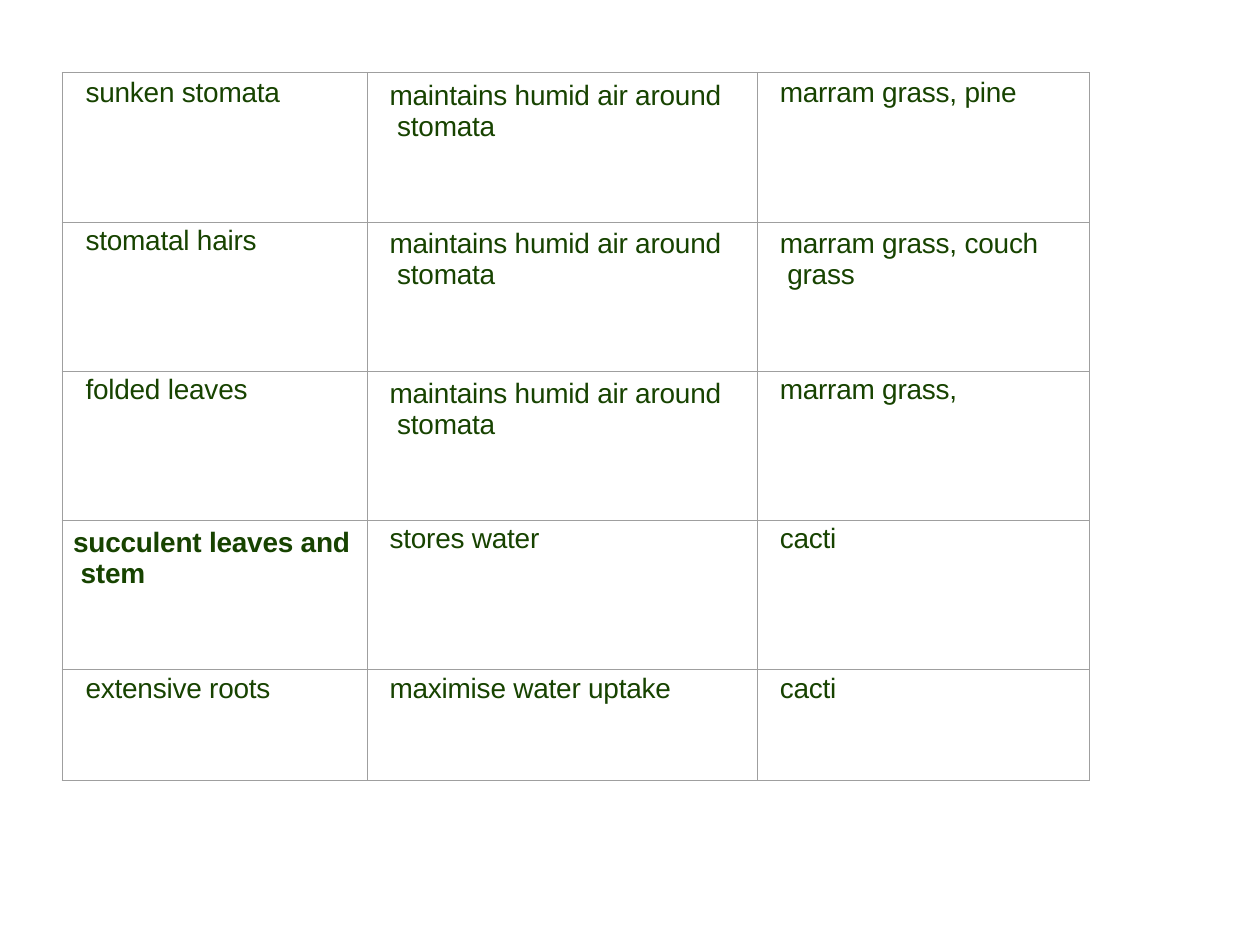
from lxml.etree import SubElement
from pptx import Presentation
from pptx.dml.color import RGBColor
from pptx.oxml.ns import qn
from pptx.util import Pt

GREEN, GREY = "174300", "9F9F9F"
COL_WIDTHS = [174.25, 223, 189.75]
ROW_HEIGHTS = [85.25] * 4 + [63.5]
INDENTS = [13.4, 12.9, 12.9]
WRAP_INDENT = 4.3
HUMID = "maintains humid air around stomata"
ADAPTATIONS = [
    ["sunken stomata", HUMID, "marram grass, pine"],
    ["stomatal hairs", HUMID, "marram grass, couch grass"],
    ["folded leaves", HUMID, "marram grass,"],
    ["succulent leaves and stem", "stores water", "cacti"],
    ["extensive roots", "maximise water uptake", "cacti"],
]
WRAPPED = {HUMID, "marram grass, couch grass", "succulent leaves and stem"}


def rgb(color):
    return RGBColor.from_string(color)


def add_text(tf, text, size=16, font="Arial", color=GREEN, bold=False,
             indent=0, hanging=0, line=None, spacing=-0.1):
    p = tf.paragraphs[0]
    p_pr = p._p.get_or_add_pPr()
    p_pr.set("marL", str(Pt(indent + hanging)))
    p_pr.set("indent", str(-Pt(hanging)))
    if line:
        p.line_spacing = Pt(line)
    r = p.add_run()
    r.text = text
    r.font.size, r.font.name, r.font.bold = Pt(size), font, bold
    r.font.color.rgb = rgb(color)
    r._r.get_or_add_rPr().set("spc", str(round(spacing * 100)))


def set_borders(cell, widths, color=GREY):
    tc_pr = cell._tc.get_or_add_tcPr()
    for side, width in widths.items():
        ln = SubElement(tc_pr, qn(f"a:ln{side}"), w=str(Pt(width)))
        fill = SubElement(ln, qn("a:solidFill"))
        SubElement(fill, qn("a:srgbClr"), val=color)


def fill_cell(cell, text, row, col):
    first = row == 0
    wrapped = text in WRAPPED
    bold = text.startswith("succulent")
    cell.margin_left = cell.margin_right = cell.margin_bottom = 0
    if wrapped:
        cell.margin_top = Pt(4.2 if first else 3.9)
    else:
        cell.margin_top = Pt(2.5 if first else 2.1)
    outer = {"L": col == 0, "R": col == len(COL_WIDTHS) - 1,
             "T": first, "B": row == len(ROW_HEIGHTS) - 1}
    set_borders(cell, {side: 0.75 if edge else 0.25 for side, edge in outer.items()})
    cell.fill.background()
    add_text(cell.text_frame, text, bold=bold,
             indent=6.3 if bold else INDENTS[col],
             hanging=WRAP_INDENT if wrapped else 0,
             line=17.8 if wrapped else None)


def add_grid(s, left, top):
    frame = s.shapes.add_table(len(ROW_HEIGHTS), len(COL_WIDTHS), Pt(left), Pt(top),
                               Pt(sum(COL_WIDTHS)), Pt(sum(ROW_HEIGHTS)))
    table = frame.table
    table.first_row = table.horz_banding = False
    for column, width in zip(table.columns, COL_WIDTHS):
        column.width = Pt(width)
    for i, (height, texts) in enumerate(zip(ROW_HEIGHTS, ADAPTATIONS)):
        table.rows[i].height = Pt(height)
        for j, text in enumerate(texts):
            fill_cell(table.cell(i, j), text, i, j)


def main():
    prs = Presentation()
    prs.slide_width, prs.slide_height = Pt(720), Pt(540)
    s = prs.slides.add_slide(prs.slide_layouts[6])
    add_grid(s, 35.5, 41.5)
    prs.save("out.pptx")


if __name__ == "__main__":
    main()
